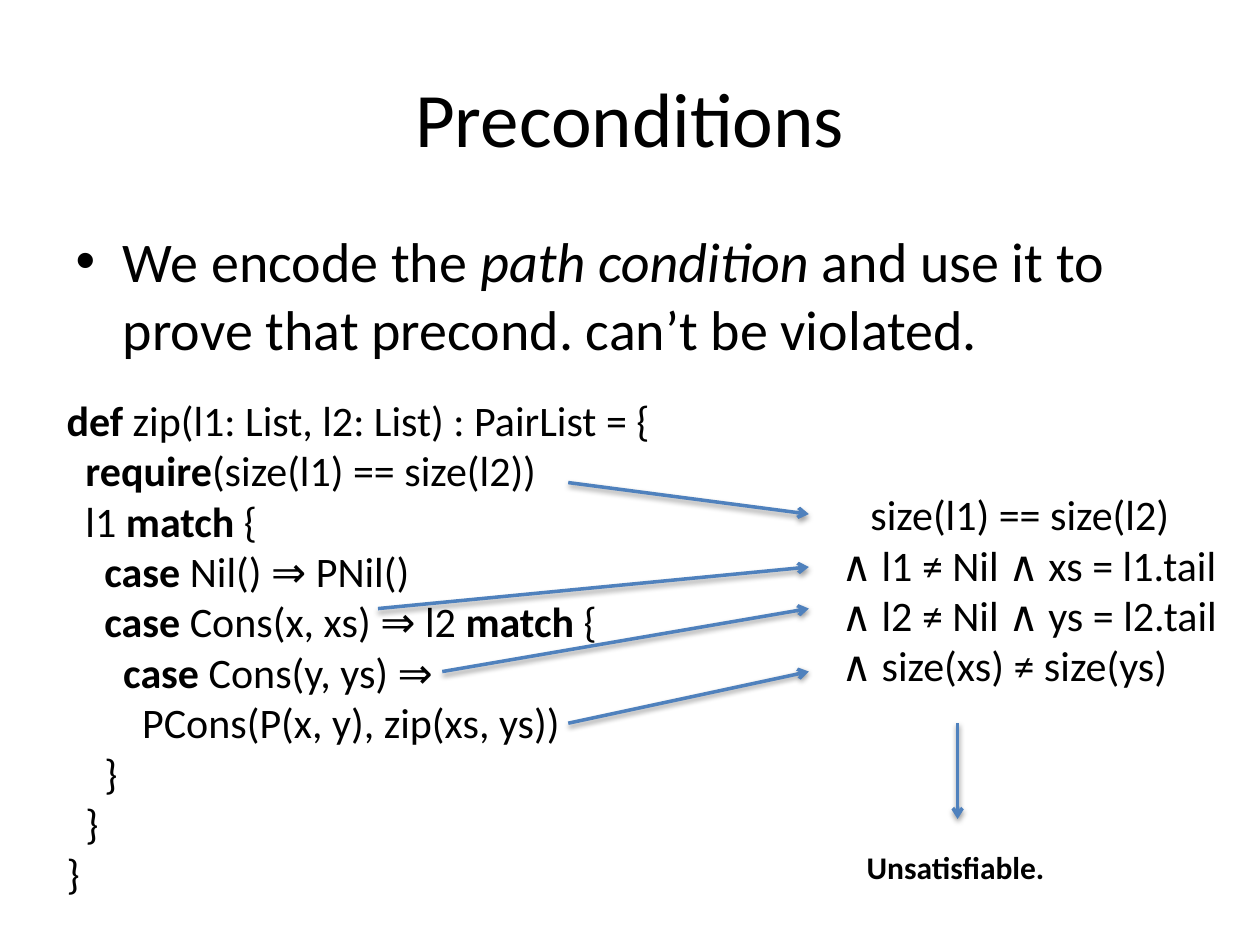
from dataclasses import dataclass

import pptx
import pptx.dml.color
import pptx.enum.shapes
import pptx.enum.text
import pptx.oxml
import pptx.oxml.ns
import pptx.util
from pptx.util import Inches

FONT = "Calibri"
BLACK = "000000"
ARROW_BLUE = "4F81BD"
INDENT = 0.15  # inches per code level


@dataclass
class Line:
    """One line of text; parts between asterisks are emphasised."""
    marked: str
    indent: float = 0


@dataclass
class Arrow:
    start: tuple[float, float]
    end: tuple[float, float]


def color(hex_value: str) -> pptx.dml.color.RGBColor:
    return pptx.dml.color.RGBColor.from_string(hex_value)


def write_line(paragraph, marked: str, size: float, emphasis: str = "bold") -> None:
    paragraph.font.name = FONT
    paragraph.font.size = pptx.util.Pt(size)
    paragraph.font.color.rgb = color(BLACK)
    for index, part in enumerate(marked.split("*")):
        if part:
            run = paragraph.add_run()
            run.text = part
            if index % 2:
                setattr(run.font, emphasis, True)


def place(shape, left: float, top: float, width: float, height: float) -> None:
    shape.left, shape.top = Inches(left), Inches(top)
    shape.width, shape.height = Inches(width), Inches(height)


def add_lines(shapes, box: tuple[float, float, float, float],
              lines: list[Line], size: float, wrap: bool = False) -> None:
    frame = shapes.add_textbox(*map(Inches, box)).text_frame
    frame.word_wrap = wrap
    frame.auto_size = pptx.enum.text.MSO_AUTO_SIZE.SHAPE_TO_FIT_TEXT
    for index, line in enumerate(lines):
        paragraph = frame.add_paragraph() if index else frame.paragraphs[0]
        write_line(paragraph, line.marked, size)
        if line.indent:
            properties = paragraph._p.get_or_add_pPr()
            properties.set("marL", str(Inches(line.indent)))
            properties.set("indent", "0")


def add_arrow(shapes, arrow: Arrow) -> None:
    connector = shapes.add_connector(
        pptx.enum.shapes.MSO_CONNECTOR.STRAIGHT,
        *map(Inches, arrow.start + arrow.end))
    connector.line.color.rgb = color(ARROW_BLUE)
    connector.line.width = pptx.util.Pt(2)
    namespace = pptx.oxml.ns.nsdecls("a")
    connector.line._get_or_add_ln().append(
        pptx.oxml.parse_xml(f'<a:tailEnd {namespace} type="arrow"/>'))
    blur, distance = pptx.util.Pt(3.1), pptx.util.Pt(1.6)
    connector._element.spPr.append(pptx.oxml.parse_xml(
        f'<a:effectLst {namespace}><a:outerShdw blurRad="{blur}" dist="{distance}" '
        f'dir="5400000" rotWithShape="0"><a:srgbClr val="{BLACK}">'
        '<a:alpha val="38000"/></a:srgbClr></a:outerShdw></a:effectLst>'))


CODE = [
    Line("*def* zip(l1: List, l2: List) : PairList = {"),
    Line("*require*(size(l1) == size(l2))", INDENT),
    Line("l1 *match *{", INDENT),
    Line("*case *Nil() ⇒ PNil()", 2 * INDENT),
    Line("*case *Cons(x, xs) ⇒ l2 *match *{", 2 * INDENT),
    Line("*case *Cons(y, ys) ⇒", 3 * INDENT),
    Line("PCons(P(x, y), zip(xs, ys))", 4 * INDENT),
    Line("}", 2 * INDENT),
    Line("}", INDENT),
    Line("}"),
]
PATH_CONDITION = [
    Line("size(l1) == size(l2)", 0.23),
    Line("∧ l1 ≠ Nil ∧ xs = l1.tail"),
    Line("∧ l2 ≠ Nil ∧ ys = l2.tail"),
    Line("∧ size(xs) ≠ size(ys)"),
]
CONDITION_X = 6.42
CODE_TO_CONDITION = [
    Arrow((4.51, 3.83), (CONDITION_X, 4.08)),
    Arrow((3.51, 5.33), (CONDITION_X, 4.83)),
    Arrow((3, 4.83), (CONDITION_X, 4.5)),
    Arrow((4.51, 5.74), (CONDITION_X, 5.33)),
]


def main() -> None:
    presentation = pptx.Presentation()
    presentation.slide_width, presentation.slide_height = Inches(10), Inches(7.5)
    slide = presentation.slides.add_slide(presentation.slide_layouts[1])

    # Title and statement
    title, statement = slide.placeholders
    place(title, 0.5, 0.3, 9, 1.25)
    write_line(title.text_frame.paragraphs[0], "Preconditions", 44)
    place(statement, 0.5, 1.75, 9, 1.33)
    write_line(
        statement.text_frame.paragraphs[0],
        "We encode the *path condition* and use it to prove that precond. can’t be violated.",
        32, "italic")

    # Code
    add_lines(slide.shapes, (0.43, 3.08, 4.87, 4.14), CODE, 24)

    # Conclusion
    add_arrow(slide.shapes, Arrow((7.6, 5.74), (7.6, 6.5)))
    add_lines(slide.shapes, (6.78, 6.68, 1.63, 0.4), [Line("*Unsatisfiable.*")], 18)

    # Path condition, linked to the code it comes from
    derivation = slide.shapes.add_group_shape().shapes
    add_lines(derivation, (6.58, 3.83, 3.25, 1.72), PATH_CONDITION, 24, wrap=True)
    for arrow in CODE_TO_CONDITION:
        add_arrow(derivation, arrow)

    presentation.save("out.pptx")


if __name__ == "__main__":
    main()
